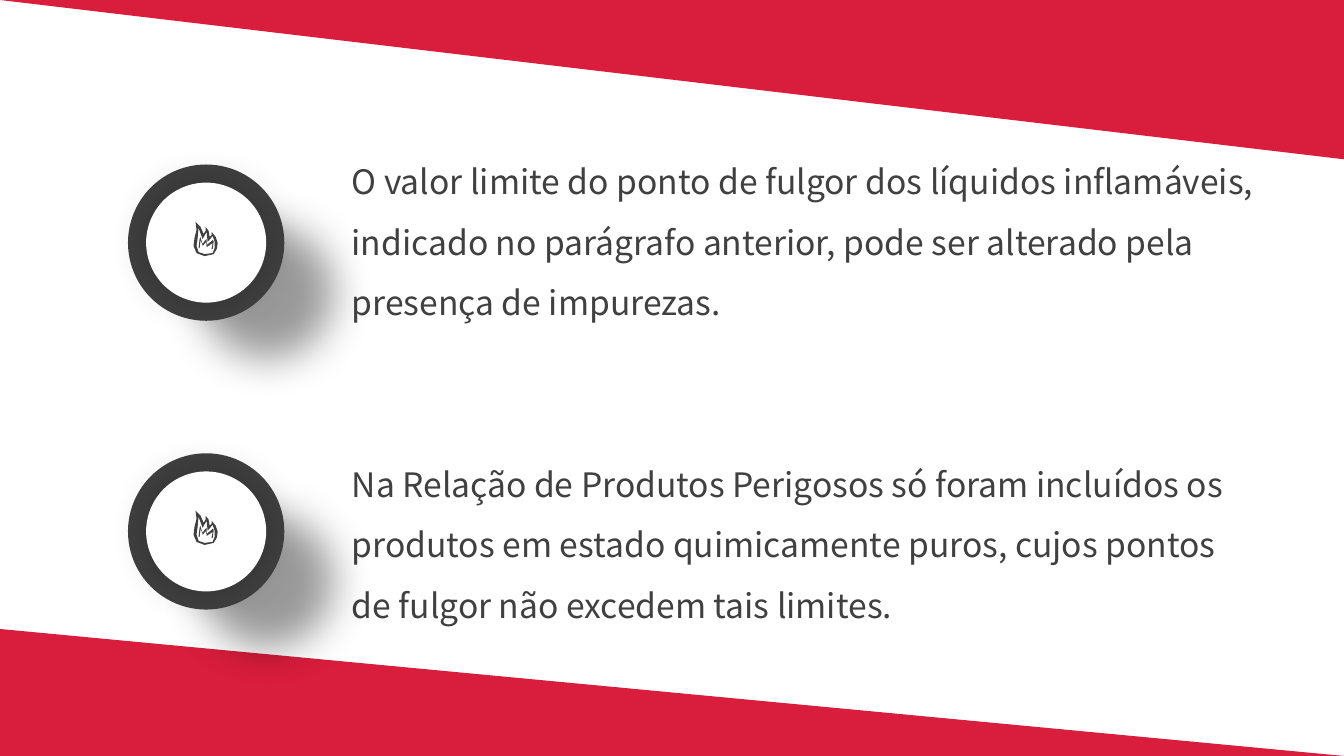
from dataclasses import dataclass

from lxml import etree
from pptx import Presentation
from pptx.dml.color import RGBColor
from pptx.enum.shapes import MSO_SHAPE
from pptx.enum.text import MSO_AUTO_SIZE
from pptx.oxml.ns import qn
from pptx.util import Emu, Inches, Pt

RECT = MSO_SHAPE.RECTANGLE
OVAL = MSO_SHAPE.OVAL
WEDGE = MSO_SHAPE.RIGHT_TRIANGLE
GROW = MSO_AUTO_SIZE.SHAPE_TO_FIT_TEXT

WIDTH, HEIGHT = Inches(13.33), Inches(7.5)
FONT = "Noto Sans CJK SC"
COLORS = {"paper": "FFFFFF", "ink": "404040", "red": "D91D3C", "shade": "000000"}


@dataclass(frozen=True)
class Box:
    left: float
    top: float
    width: float
    height: float


@dataclass(frozen=True)
class Shade:
    blur: float
    dist: float
    angle: int
    size: int
    side: str


@dataclass(frozen=True)
class Disc:
    size: float
    color: str
    shade: Shade


@dataclass(frozen=True)
class Wedge:
    box: Box
    turn: int


CENTER, FIRST, PITCH = 15.34, 32.1, 38.2
DISCS = (
    Disc(11.63, "ink", Shade(30, 50, 45, 85, "r")),
    Disc(8.93, "paper", Shade(35, 0, 0, 85, "ctr")),
)
WEDGES = (
    Wedge(Box(0, 0, 100, 21.07), 180),
    Wedge(Box(0, 83.2, 100, 16.8), 0),
)
TEXT = Box(25.43, 18, 69.09, 65.07)
TEXTS = (
    "O valor limite do ponto de fulgor dos líquidos inflamáveis, indicado no "
    "parágrafo anterior, pode ser alterado pela presença de impurezas.",
    "Na Relação de Produtos Perigosos só foram incluídos os produtos em estado "
    "quimicamente puros, cujos pontos de fulgor não excedem tais limites.",
)

Path = tuple[tuple[int, int], ...]
UNIT = HEIGHT / 750
ICON_LEFT, ICON_RISE = 14.4, 2.75
FLAME: tuple[Path, ...] = (
    ((18, 10), (18, 13), (16, 15), (15, 9), (12, 5), (12, 9), (10, 12),
     (7, 5), (2, 0), (3, 8), (1, 16), (0, 24), (3, 31), (11, 34),
     (20, 32), (23, 27), (24, 21), (22, 15)),
    ((21, 26), (19, 31), (11, 32), (5, 30), (3, 24), (4, 17), (5, 6),
     (9, 17), (13, 10), (14, 20), (19, 14), (21, 20)),
)
SPARK: tuple[Path, ...] = (
    ((19, 18), (18, 19), (13, 23), (13, 17), (11, 19), (9, 22), (7, 16),
     (7, 15), (6, 17), (5, 26), (6, 26), (7, 18), (9, 23), (9, 24), (10, 23),
     (12, 20), (13, 24), (13, 25), (19, 21), (18, 26), (18, 27), (19, 27),
     (20, 19)),
)


def wide(share: float) -> Emu:
    return Emu(round(WIDTH * share / 100))


def high(share: float) -> Emu:
    return Emu(round(HEIGHT * share / 100))


def frame(box: Box) -> tuple[Emu, Emu, Emu, Emu]:
    return wide(box.left), high(box.top), wide(box.width), high(box.height)


def paint(shape, color: str) -> None:
    shape.fill.solid()
    shape.fill.fore_color.rgb = RGBColor.from_string(COLORS[color])
    shape.line.fill.background()
    shape.shadow.inherit = False


def cast(shape, shade: Shade) -> None:
    effects = shape.element.spPr.find(qn("a:effectLst"))
    size = str(shade.size * 1000)
    outer = etree.SubElement(
        effects, qn("a:outerShdw"),
        blurRad=str(Pt(shade.blur)), dist=str(Pt(shade.dist)),
        dir=str(shade.angle * 60000), sx=size, sy=size,
        algn=shade.side, rotWithShape="0")
    color = etree.SubElement(outer, qn("a:srgbClr"), val=COLORS["shade"])
    etree.SubElement(color, qn("a:alpha"), val="40000")


def add_disc(group, disc: Disc, middle: float) -> None:
    size = wide(disc.size)
    shape = group.shapes.add_shape(
        OVAL, wide(CENTER) - size // 2, high(middle) - size // 2, size, size)
    paint(shape, disc.color)
    cast(shape, disc.shade)


def add_icon(group, paths: tuple[Path, ...], top: float) -> None:
    pen = group.shapes.build_freeform(*paths[0][0], scale=UNIT)
    for index, path in enumerate(paths):
        if index:
            pen.move_to(*path[0])
        pen.add_line_segments(path[1:], close=True)
    paint(pen.convert_to_shape(wide(ICON_LEFT), high(top)), "ink")


def add_badge(slide, row: int) -> None:
    middle = FIRST + row * PITCH
    ring = slide.shapes.add_group_shape()
    for disc in DISCS:
        add_disc(ring, disc, middle)
    icon = slide.shapes.add_group_shape()
    for paths in (FLAME, SPARK):
        add_icon(icon, paths, middle - ICON_RISE)


def add_text(slide) -> None:
    body = slide.shapes.add_textbox(*frame(TEXT)).text_frame
    body.word_wrap = True
    body.auto_size = GROW
    for index, text in enumerate(TEXTS):
        para = body.add_paragraph() if index else body.paragraphs[0]
        para.line_spacing = 1.5
        para.space_before = Pt(86.4 * index)
        run = para.add_run()
        run.text = text
        run.font.name = FONT
        run.font.size = Pt(24)
        run.font.color.rgb = RGBColor.from_string(COLORS["ink"])


def add_wedge(slide, wedge: Wedge) -> None:
    shape = slide.shapes.add_shape(WEDGE, *frame(wedge.box))
    shape.rotation = wedge.turn
    paint(shape, "red")


def main() -> None:
    deck = Presentation()
    deck.slide_width, deck.slide_height = WIDTH, HEIGHT
    slide = deck.slides.add_slide(deck.slide_layouts[6])
    paint(slide.shapes.add_shape(RECT, *frame(Box(0, 0, 100, 100))), "paper")
    add_badge(slide, 0)
    add_text(slide)
    for wedge in WEDGES:
        add_wedge(slide, wedge)
    add_badge(slide, 1)
    deck.save("out.pptx")


if __name__ == "__main__":
    main()
